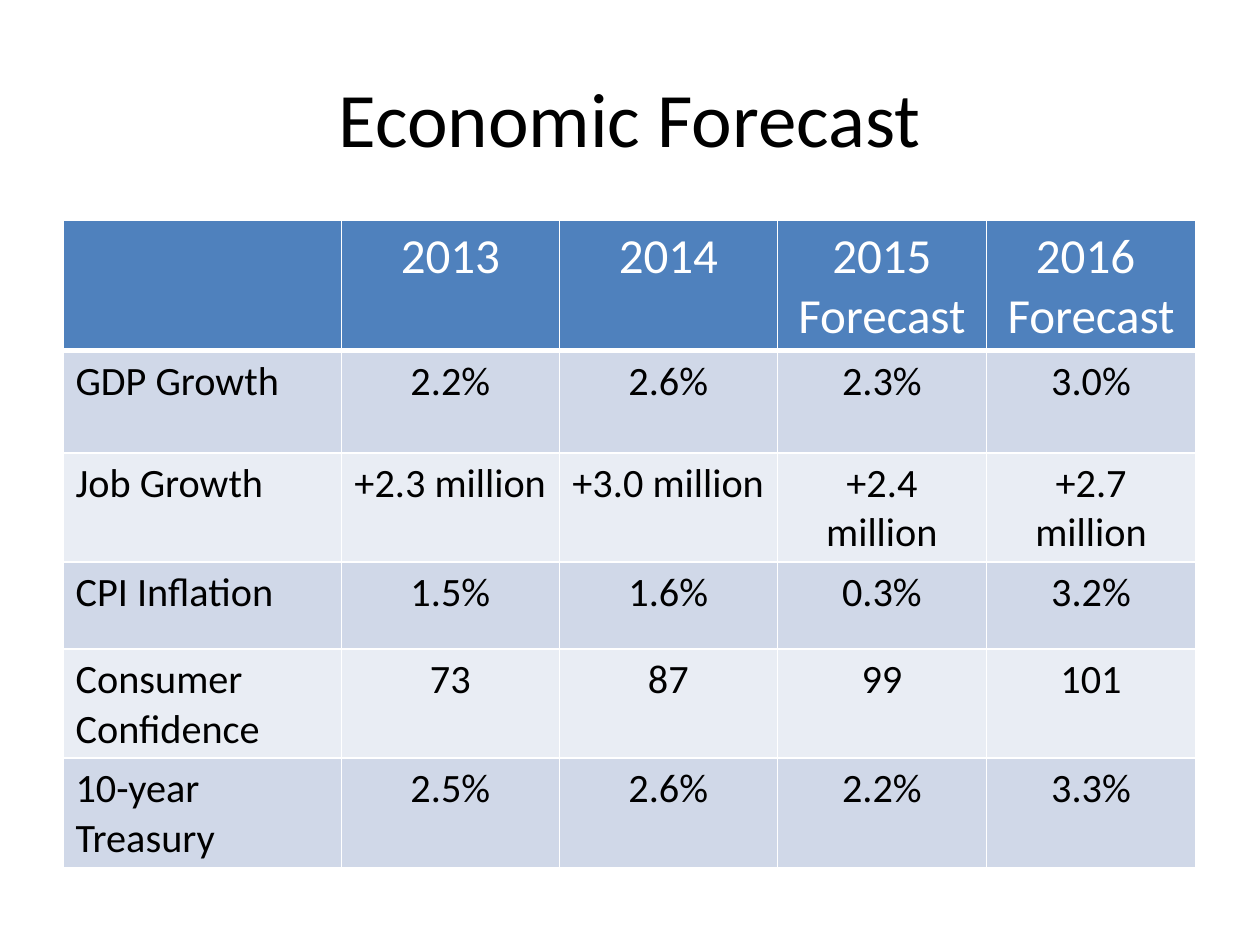
from typing import NamedTuple

from lxml.etree import SubElement
from pptx import Presentation
from pptx.dml.color import RGBColor
from pptx.enum.text import MSO_ANCHOR, PP_ALIGN
from pptx.oxml.ns import qn
from pptx.util import Inches, Pt

FONT = "Calibri"
COLORS = {
    "text": "000000",
    "header": "4F81BD",
    "header_text": "FFFFFF",
    "border": "FFFFFF",
    "odd_row": "D0D8E8",
    "even_row": "E9EDF4",
}


class Indicator(NamedTuple):
    name: str
    values: tuple[str, ...]
    height: float


HEADINGS = ("", "2013", "2014", "2015\nForecast", "2016 \nForecast")
HEADER_HEIGHT = 1.03
COLUMN_WIDTHS = (2.21, 1.73, 1.73, 1.66, 1.66)
INDICATORS = (
    Indicator("GDP Growth", ("2.2%", "2.6%", "2.3%", "3.0%"), 0.81),
    Indicator("Job Growth", ("+2.3 million", "+3.0 million", "+2.4 million", "+2.7 million"), 0.75),
    Indicator("CPI Inflation", ("1.5%", "1.6%", "0.3%", "3.2%"), 0.69),
    Indicator("Consumer Confidence", ("73", "87", "99", "101"), 0.86),
    Indicator("10-year Treasury", ("2.5%", "2.6%", "2.2%", "3.3%"), 0.83),
)


def format_text(text_frame, size: float, color: str, align: PP_ALIGN) -> None:
    for paragraph in text_frame.paragraphs:
        paragraph.alignment = align
        for run in paragraph.runs:
            run.font.name = FONT
            run.font.size = Pt(size)
            run.font.bold = False
            run.font.color.rgb = RGBColor.from_string(COLORS[color])


def set_borders(cell, top: float, bottom: float) -> None:
    """Draw all four cell edges; the side edges are 1 pt wide."""
    properties = cell._tc.get_or_add_tcPr()
    for edge, width in (("L", 1), ("R", 1), ("T", top), ("B", bottom)):
        line = SubElement(properties, qn(f"a:ln{edge}"), w=str(Pt(width)))
        fill = SubElement(line, qn("a:solidFill"))
        SubElement(fill, qn("a:srgbClr"), val=COLORS["border"])


def add_title(slide, title: str) -> None:
    box = slide.shapes.add_textbox(Inches(0.5), Inches(0.3), Inches(9), Inches(1.25))
    frame = box.text_frame
    frame.word_wrap = True
    frame.vertical_anchor = MSO_ANCHOR.MIDDLE
    frame.text = title
    format_text(frame, 44, "text", PP_ALIGN.CENTER)


def add_forecast_table(slide) -> None:
    rows = [HEADINGS] + [(item.name, *item.values) for item in INDICATORS]
    heights = [HEADER_HEIGHT] + [item.height for item in INDICATORS]
    table = slide.shapes.add_table(
        len(rows), len(HEADINGS), Inches(0.5), Inches(1.75),
        Inches(sum(COLUMN_WIDTHS)), Inches(sum(heights)),
    ).table
    for column, width in zip(table.columns, COLUMN_WIDTHS):
        column.width = Inches(width)

    for r, (entries, height) in enumerate(zip(rows, heights)):
        table.rows[r].height = Inches(height)
        is_header = r == 0
        fill = "header" if is_header else "odd_row" if r % 2 else "even_row"
        for c, entry in enumerate(entries):
            cell = table.cell(r, c)
            set_borders(cell, top=3 if r == 1 else 1, bottom=3 if is_header else 1)
            cell.fill.solid()
            cell.fill.fore_color.rgb = RGBColor.from_string(COLORS[fill])
            cell.text_frame.text = entry
            format_text(
                cell.text_frame,
                28 if is_header else 23,
                "header_text" if is_header else "text",
                PP_ALIGN.CENTER if is_header or c else PP_ALIGN.LEFT,
            )


def main() -> None:
    presentation = Presentation()
    presentation.slide_width = Inches(10)
    presentation.slide_height = Inches(7.5)
    slide = presentation.slides.add_slide(presentation.slide_layouts[6])
    add_title(slide, "Economic Forecast")
    add_forecast_table(slide)
    presentation.save("out.pptx")


if __name__ == "__main__":
    main()
